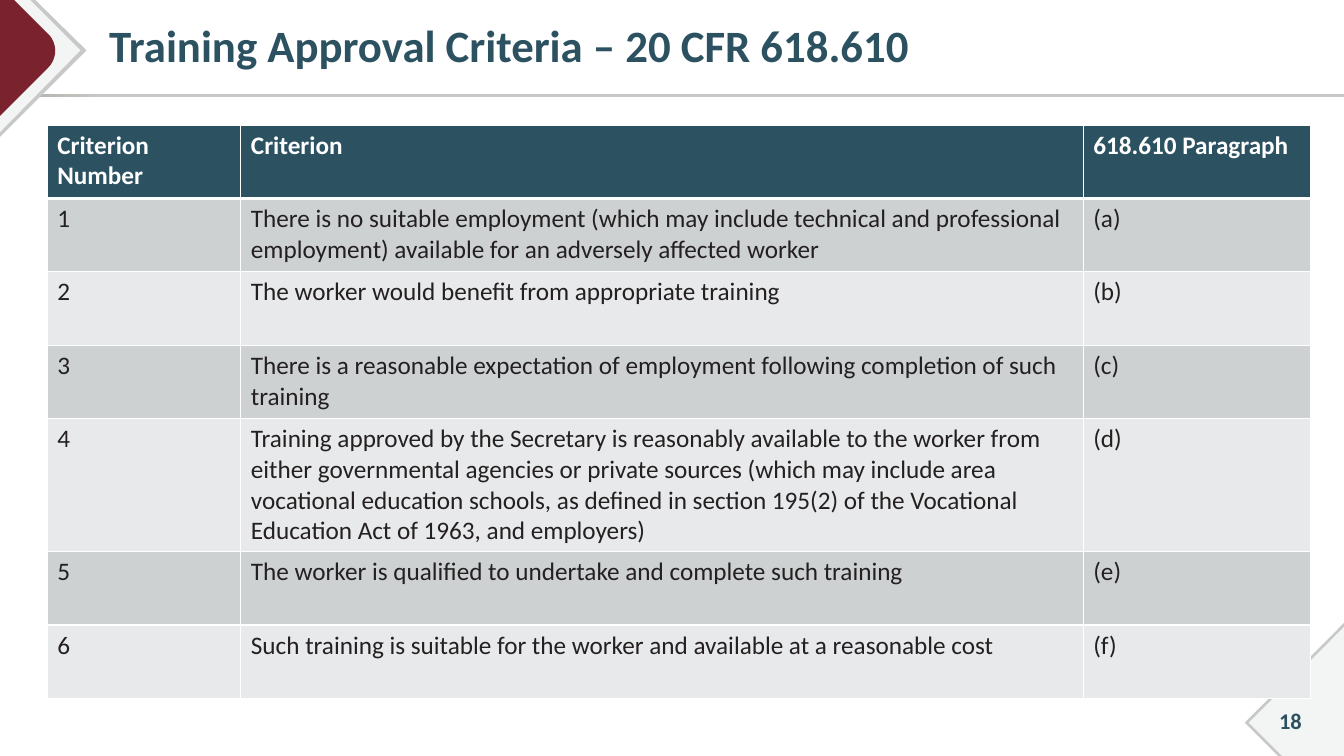
from lxml import etree
from pptx import Presentation
from pptx import util as u
from pptx.dml.color import RGBColor
from pptx.enum import shapes, text
from pptx.oxml.ns import qn

TEAL = RGBColor(0x2C, 0x52, 0x61)
MAROON = RGBColor(0x7A, 0x23, 0x2F)
LINE_GREY = RGBColor(0xC8, 0xC8, 0xC6)
DARK_GREY = RGBColor(0xAB, 0xAB, 0xA8)
PALE = RGBColor(0xF3, 0xF4, 0xF4)
BAND_DARK = RGBColor(0xCD, 0xD1, 0xD2)
BAND_LIGHT = RGBColor(0xE8, 0xE9, 0xEA)
INK = RGBColor(0x24, 0x20, 0x21)
WHITE = RGBColor(0xFF, 0xFF, 0xFF)

WIDTH, HEIGHT = 33.87, 19.05
COLUMN_WIDTHS = [4.88, 21.23, 5.72]
ROW_HEIGHT, TALL_ROW_HEIGHT, TALL_ROW = 1.85, 3.35, 4
HEADINGS = ["Criterion Number", "Criterion", "618.610 Paragraph"]
CRITERIA = [
    "There is no suitable employment (which may include technical and professional "
    "employment) available for an adversely affected worker",
    "The worker would benefit from appropriate training",
    "There is a reasonable expectation of employment following completion of such training",
    "Training approved by the Secretary is reasonably available to the worker from either "
    "governmental agencies or private sources (which may include area vocational education "
    "schools, as defined in section 195(2) of the Vocational Education Act of 1963, and employers)",
    "The worker is qualified to undertake and complete such training",
    "Such training is suitable for the worker and available at a reasonable cost",
]


def bezier(start, first, second, end, steps=12):
    """Return points along a cubic curve, both ends included."""
    points = []
    for step in range(steps + 1):
        t = step / steps
        weights = ((1 - t) ** 3, 3 * t * (1 - t) ** 2, 3 * t * t * (1 - t), t ** 3)
        corners = list(zip(weights, (start, first, second, end)))
        points.append(tuple(sum(w * p[axis] for w, p in corners) for axis in (0, 1)))
    return points


class SlideBuilder:
    font_name = "Calibri"

    def __init__(self, deck):
        self.slide = deck.slides.add_slide(deck.slide_layouts[6])

    def add_words(self, frame, words, size, color, bold=False, **paragraph_format):
        para = frame.paragraphs[0]
        for name, value in paragraph_format.items():
            setattr(para, name, value)
        span = para.add_run()
        span.text = words
        font = {"name": self.font_name, "size": u.Pt(size), "bold": bold}
        for name, value in font.items():
            setattr(span.font, name, value)
        span.font.color.rgb = color

    def text_box(self, place, words, size, left_inset=0.25, **paragraph_format):
        box = self.slide.shapes.add_textbox(*map(u.Cm, place))
        frame = box.text_frame
        settings = {"word_wrap": True, "vertical_anchor": text.MSO_ANCHOR.MIDDLE,
                    "margin_left": u.Cm(left_inset)}
        for name, value in settings.items():
            setattr(frame, name, value)
        self.add_words(frame, words, size, TEAL, True, **paragraph_format)

    def outline(self, points, color):
        """Fill a closed outline given in centimetres."""
        corners = [(u.Cm(x), u.Cm(y)) for x, y in points]
        builder = self.slide.shapes.build_freeform(*corners[0])
        builder.add_line_segments(corners[1:], close=True)
        shape = builder.convert_to_shape()
        shape.shadow.inherit = False
        shape.fill.solid()
        shape.fill.fore_color.rgb = color
        shape.line.fill.background()

    def gradient_bar(self, place, start, end):
        bar = self.slide.shapes.add_shape(shapes.MSO_SHAPE.RECTANGLE, *map(u.Cm, place))
        bar.shadow.inherit = False
        bar.line.fill.background()
        bar.fill.gradient()
        bar.fill.gradient_angle = 0
        for stop, color, position in zip(bar.fill.gradient_stops, (start, end), (0, 0.08)):
            stop.color.rgb = color
            stop.position = position

    def border(self, cell, side, points):
        line = etree.SubElement(cell._tc.get_or_add_tcPr(), qn("a:ln" + side),
                                w=str(u.Pt(points)))
        fill = etree.SubElement(line, qn("a:solidFill"))
        etree.SubElement(fill, qn("a:srgbClr"), val=str(WHITE))

    def table(self, left, top, widths, heights, rows):
        frame = self.slide.shapes.add_table(
            len(rows), len(widths), *map(u.Cm, (left, top, sum(widths), sum(heights))))
        table = frame.table
        for column, width in zip(table.columns, widths):
            column.width = u.Cm(width)
        for row, height in zip(table.rows, heights):
            row.height = u.Cm(height)
        for index, row in enumerate(rows):
            header = index == 0
            fill = TEAL if header else BAND_DARK if index % 2 else BAND_LIGHT
            for column, words in enumerate(row):
                cell = table.cell(index, column)
                for side, edge_row in {"L": None, "R": None, "T": 1, "B": 0}.items():
                    self.border(cell, side, 3 if index == edge_row else 1)
                cell.fill.solid()
                cell.fill.fore_color.rgb = fill
                self.add_words(cell.text_frame, words, 18, WHITE if header else INK, header)


def main():
    deck = Presentation()
    deck.slide_width, deck.slide_height = u.Cm(WIDTH), u.Cm(HEIGHT)
    page = SlideBuilder(deck)

    page.gradient_bar((0, 2.36, WIDTH, 0.08), DARK_GREY, LINE_GREY)
    page.outline([(0, 0), (0.89, 0), (2.18, 1.27), (0, 3.45)], LINE_GREY)
    page.outline([(0, 0), (0.76, 0), (2.03, 1.27), (0, 3.33)], PALE)
    rounded_tip = bezier((1.22, 0.86), (1.45, 1.09), (1.45, 1.47), (1.22, 1.7))
    page.outline([(0, 0), (0.36, 0), *rounded_tip, (0, 2.92)], MAROON)
    for inset, color in ((0, LINE_GREY), (0.1, PALE)):
        page.outline([(WIDTH, 15.7 + inset), (WIDTH, HEIGHT),
                      (32.21 + inset, HEIGHT), (31.37 + inset, 18.21)], color)

    page.text_box((2.24, 0.13, 30.78, 2.18), "Training Approval Criteria – 20 CFR 618.610",
                  32, left_inset=0.51, line_spacing=0.9)
    rows = [HEADINGS] + [[str(number), criterion, f"({letter})"] for number, (criterion, letter)
                         in enumerate(zip(CRITERIA, "abcdef"), start=1)]
    heights = [TALL_ROW_HEIGHT if index == TALL_ROW else ROW_HEIGHT
               for index in range(len(rows))]
    page.table(1.19, 3.15, COLUMN_WIDTHS, heights, rows)
    page.text_box((31.62, 17.65, 1.8, 1.02), "18", 16, alignment=text.PP_ALIGN.CENTER)

    deck.save("out.pptx")


if __name__ == "__main__":
    main()
